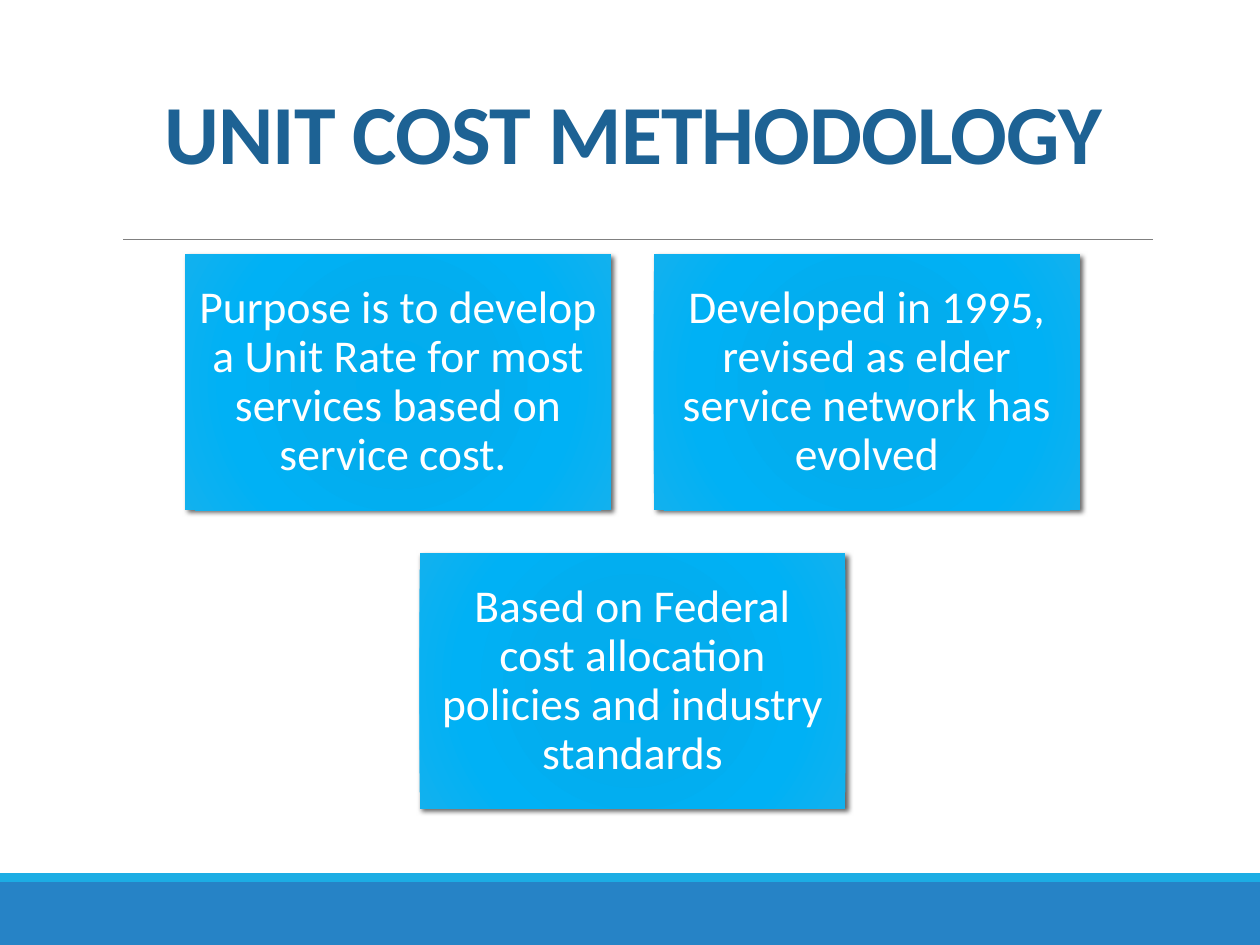
from pptx import Presentation
from pptx.dml.color import RGBColor
from pptx.enum.shapes import MSO_CONNECTOR, MSO_SHAPE
from pptx.enum.text import MSO_ANCHOR, PP_ALIGN
from pptx.oxml import parse_xml
from pptx.oxml.ns import nsdecls
from pptx.util import Inches, Pt

BLUE = RGBColor(0x26, 0x83, 0xC6)
CYAN = RGBColor(0x1C, 0xAD, 0xE4)
NAVY = RGBColor(0x1D, 0x62, 0x94)
GRAY = RGBColor(0x80, 0x80, 0x80)
WHITE = RGBColor(0xFF, 0xFF, 0xFF)
BLACK = RGBColor(0x00, 0x00, 0x00)
CARD_STOPS = [
    (0, RGBColor(0x00, 0xAD, 0xEF)),
    (34, RGBColor(0x03, 0xAD, 0xEE)),
    (70, RGBColor(0x00, 0xB1, 0xF5)),
    (100, RGBColor(0x12, 0xB1, 0xEE)),
]
FONT = "Calibri"

CARD_ROWS = [
    ["Purpose is to develop a Unit Rate for most services based on service cost. ",
     "Developed in 1995, revised as elder service network has evolved"],
    ["Based on Federal cost allocation policies and industry standards"],
]


def add_rect(page, left, top, width, height):
    """Add a rectangle without outline or shadow."""
    box = page.shapes.add_shape(MSO_SHAPE.RECTANGLE, left, top, width, height)
    box.shadow.inherit = False
    box.line.fill.background()
    return box


def format_text(frame, size, color, spacing, bold=False):
    frame.word_wrap = True
    frame.vertical_anchor = MSO_ANCHOR.MIDDLE
    para = frame.paragraphs[0]
    para.alignment = PP_ALIGN.CENTER
    para.line_spacing = spacing
    span = para.runs[0]
    span.font.name = FONT
    span.font.size = Pt(size)
    span.font.bold = bold
    span.font.color.rgb = color
    return span


def add_footer(page, left, top, width, height):
    stripe = Inches(0.07)
    for color, y, band_height in ((BLUE, top + stripe, height - stripe),
                                  (CYAN, top, stripe)):
        band = add_rect(page, left, y, width, band_height)
        band.fill.solid()
        band.fill.fore_color.rgb = color


def add_title(page, left, top, width, height):
    title = page.shapes.title
    title.left, title.top, title.width, title.height = left, top, width, height
    title.text_frame.text = "UNIT COST METHODOLOGY"
    span = format_text(title.text_frame, 48, NAVY, 0.85, bold=True)
    span.font._element.set("spc", "-50")

    bottom = top + height
    rule = page.shapes.add_connector(
        MSO_CONNECTOR.STRAIGHT, Inches(0.98), bottom, left + width, bottom)
    rule.line.color.rgb = GRAY
    rule.line.width = Pt(0.5)
    rule._element.spPr.append(parse_xml(f"<a:effectLst {nsdecls('a')}/>"))


def apply_card_finish(card):
    """Give the card a radial gradient and a soft shadow to the lower right."""
    stops = "".join(
        f'<a:gs pos="{percent * 1000}"><a:srgbClr val="{color}"/></a:gs>'
        for percent, color in CARD_STOPS)
    gradient = parse_xml(
        f'<a:gradFill {nsdecls("a")} rotWithShape="1"><a:gsLst>{stops}</a:gsLst>'
        '<a:path path="circle"><a:fillToRect l="100000" t="100000" '
        'r="100000" b="100000"/></a:path></a:gradFill>')
    shadow = parse_xml(
        f'<a:outerShdw {nsdecls("a")} blurRad="{Pt(3)}" dist="{Pt(2)}" '
        f'dir="{45 * 60000}" rotWithShape="0"><a:srgbClr val="{BLACK}">'
        '<a:alpha val="60000"/></a:srgbClr></a:outerShdw>')
    properties = card._element.spPr
    properties.prstGeom.addnext(gradient)
    properties.effectLst.append(shadow)


def add_card(page, text, left, top, width, height):
    card = add_rect(page, left, top, width, height)
    apply_card_finish(card)
    frame = card.text_frame
    frame.margin_left = frame.margin_right = Inches(0.11)
    frame.margin_top = frame.margin_bottom = Inches(0.11)
    frame.text = text
    format_text(frame, 26, WHITE, 0.9)


def add_cards(page, left, top, width, height):
    """Lay out the card rows, each row centred in the box."""
    gap = Inches(0.34)
    card_width = (width - gap) // 2
    card_height = (height - gap) // 2
    for row, texts in enumerate(CARD_ROWS):
        row_width = len(texts) * (card_width + gap) - gap
        row_left = left + (width - row_width) // 2
        for column, text in enumerate(texts):
            add_card(page, text, row_left + column * (card_width + gap),
                     top + row * (card_height + gap), card_width, card_height)


def main():
    deck = Presentation()
    deck.slide_width, deck.slide_height = Inches(10), Inches(7.5)
    page = deck.slides.add_slide(deck.slide_layouts[5])
    add_footer(page, 0, Inches(6.93), deck.slide_width, Inches(0.57))
    add_title(page, Inches(0.9), Inches(0.31), Inches(8.25), Inches(1.59))
    add_cards(page, Inches(1.47), Inches(2.02), Inches(7.1), Inches(4.4))
    deck.save("out.pptx")


if __name__ == "__main__":
    main()
